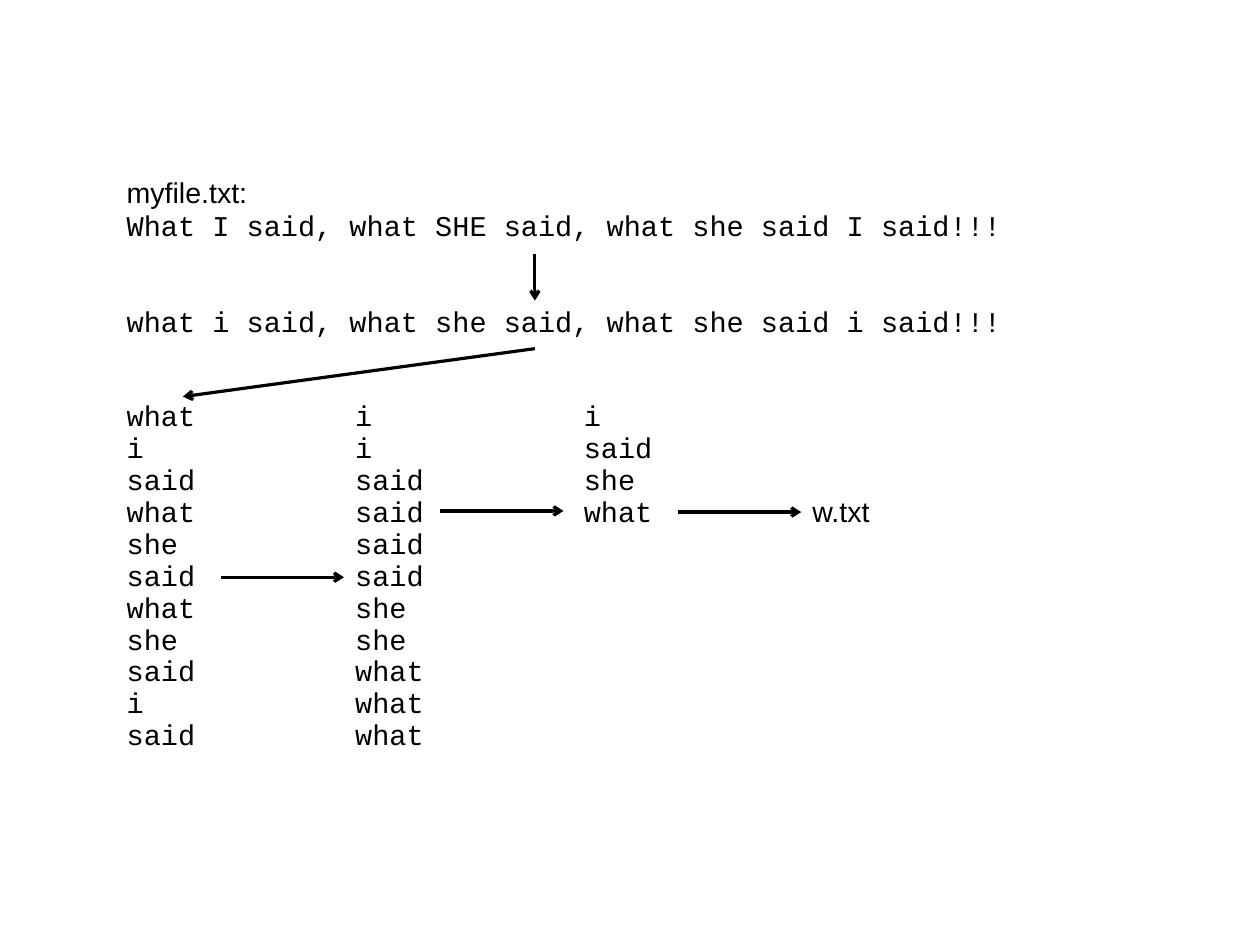
from dataclasses import dataclass
from itertools import zip_longest

from lxml import etree
from pptx import Presentation
from pptx.dml.color import RGBColor
from pptx.enum.shapes import MSO_CONNECTOR
from pptx.oxml.ns import qn
from pptx.slide import Slide
from pptx.text.text import TextFrame
from pptx.util import Inches, Pt

STRAIGHT = MSO_CONNECTOR.STRAIGHT
COLORS = {"ink": "000000"}
SANS = "Arial"
MONO = "Courier New"
UNITS_PER_INCH = 576
SLIDE_UNITS = (6350, 4762)
COLUMN_PITCH = 2
COLUMN_COUNT = 4


@dataclass
class Line:
    cells: list[str]
    font: str = MONO
    space_before: float = 0


@dataclass
class Arrow:
    start: tuple[float, float]
    end: tuple[float, float]


SPLIT_WORDS = "what i said what she said what she said i said".split()
SORTED_WORDS = sorted(SPLIT_WORDS)
UNIQUE_WORDS = sorted(set(SPLIT_WORDS))
OUTPUT_FILE = "w.txt"
SENTENCE = "What I said, what SHE said, what she said I said!!!"

ARROWS = [
    Arrow((4.68, 2.22), (4.68, 2.63)),
    Arrow((4.68, 3.05), (1.6, 3.47)),
    Arrow((1.93, 5.05), (3.01, 5.05)),
    Arrow((3.85, 4.47), (4.93, 4.47)),
    Arrow((5.93, 4.48), (7.01, 4.48)),
]


def build_lines() -> list[Line]:
    lines = [
        Line(["myfile.txt:"], SANS),
        Line([SENTENCE], space_before=0.3),
        Line([SENTENCE.lower()], space_before=40.3),
    ]
    output_column = [""] * (len(UNIQUE_WORDS) - 1) + [OUTPUT_FILE]
    rows = zip_longest(SPLIT_WORDS, SORTED_WORDS, UNIQUE_WORDS, output_column, fillvalue="")
    for index, row in enumerate(rows):
        cells = [word for word in row if word]
        lines.append(Line(cells, space_before=0 if index else 39.5))
    return lines


def add_run(paragraph, text: str, font: str) -> None:
    run = paragraph.add_run()
    run.text = text
    run.font.name = font
    run.font.size = Pt(18)
    run.font.color.rgb = RGBColor.from_string(COLORS["ink"])


def add_line(frame: TextFrame, line: Line, first: bool) -> None:
    paragraph = frame.paragraphs[0] if first else frame.add_paragraph()
    paragraph.line_spacing = 0.93
    paragraph.space_before = Pt(line.space_before)
    if len(line.cells) > 1:
        tab_list = etree.SubElement(paragraph._p.get_or_add_pPr(), qn("a:tabLst"))
        for column in range(1, COLUMN_COUNT):
            position = str(Inches(COLUMN_PITCH * column))
            etree.SubElement(tab_list, qn("a:tab"), pos=position, algn="l")
    for index, text in enumerate(line.cells):
        if index:
            add_run(paragraph, "\t", SANS)
        add_run(paragraph, text, SANS if text == OUTPUT_FILE else line.font)


def add_arrow(slide: Slide, arrow: Arrow) -> None:
    points = [Inches(value) for value in (*arrow.start, *arrow.end)]
    connector = slide.shapes.add_connector(STRAIGHT, *points)
    connector.line.color.rgb = RGBColor.from_string(COLORS["ink"])
    connector.line.width = Pt(2)
    etree.SubElement(connector.line._get_or_add_ln(), qn("a:tailEnd"), type="arrow")
    etree.SubElement(connector._element.spPr, qn("a:effectLst"))


def main() -> None:
    presentation = Presentation()
    slide_width, slide_height = (Inches(units / UNITS_PER_INCH) for units in SLIDE_UNITS)
    presentation.slide_width = slide_width
    presentation.slide_height = slide_height
    slide = presentation.slides.add_slide(presentation.slide_layouts[6])
    box = slide.shapes.add_textbox(Inches(1.01), Inches(1.22), Inches(8.97), Inches(6.86))
    frame = box.text_frame
    frame.word_wrap = True
    frame.margin_top = Inches(0.34)
    for index, line in enumerate(build_lines()):
        add_line(frame, line, index == 0)
    for arrow in ARROWS:
        add_arrow(slide, arrow)
    presentation.save("out.pptx")


if __name__ == "__main__":
    main()
